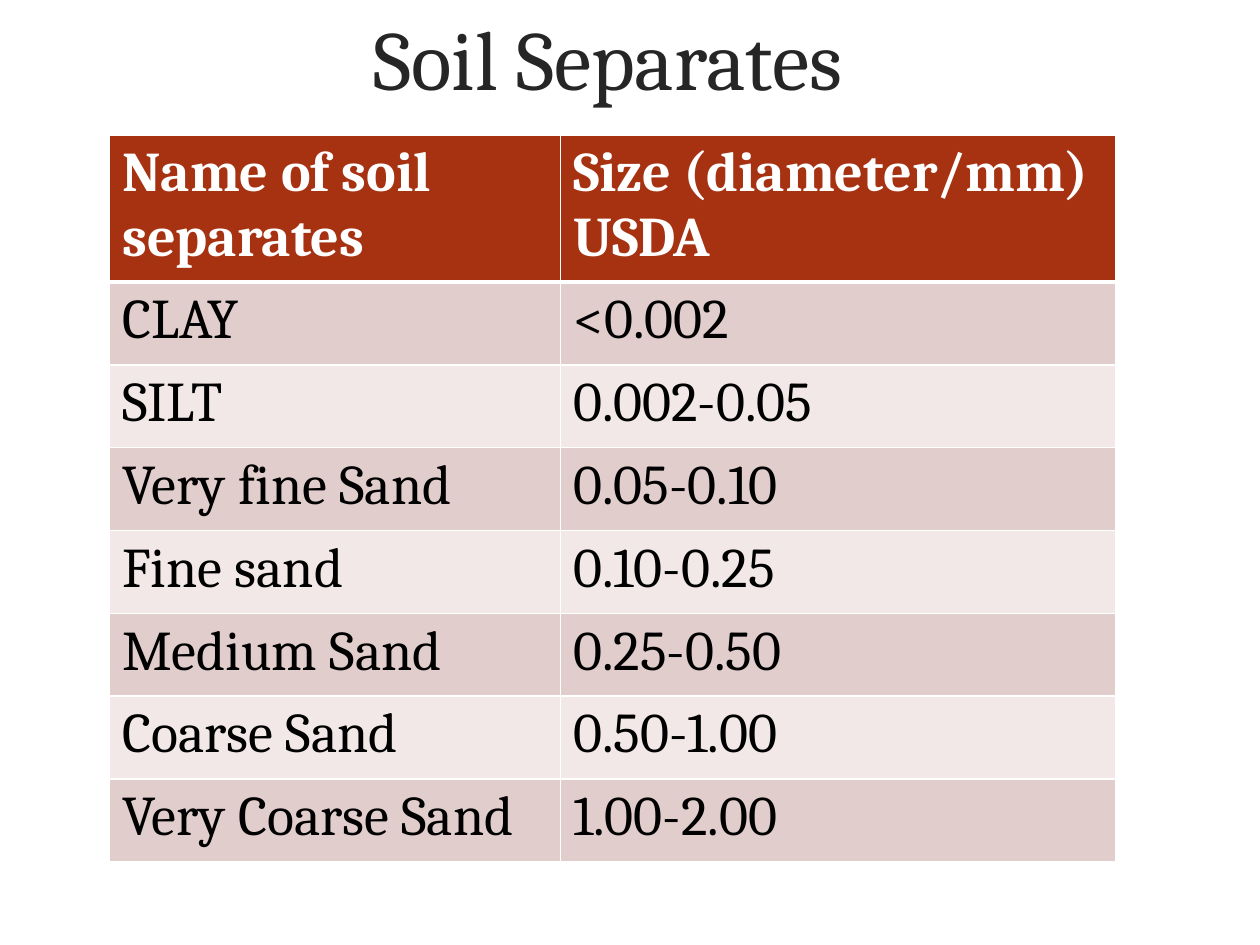
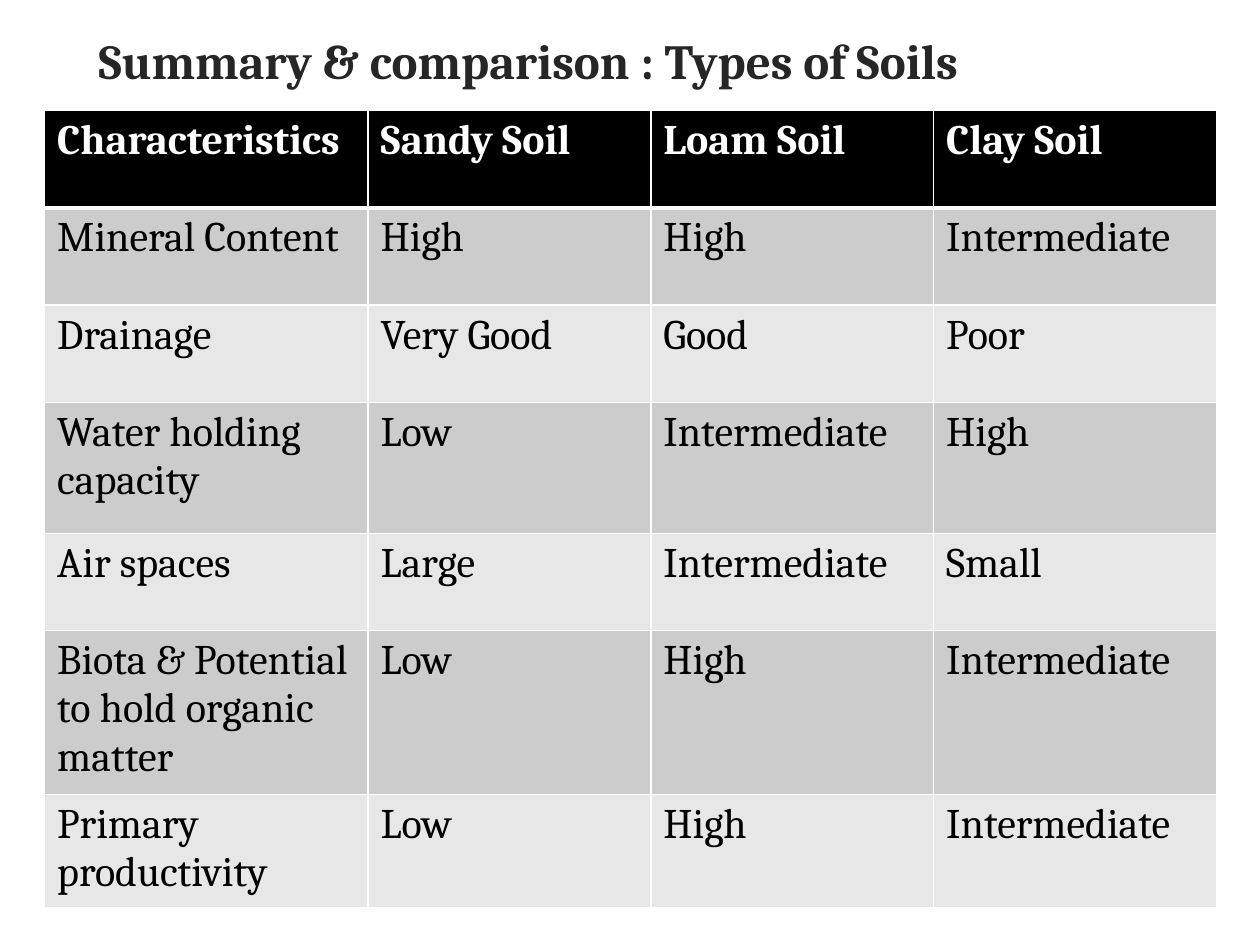
from lxml import etree
from pptx import Presentation
from pptx.dml.color import RGBColor
from pptx.enum.text import MSO_ANCHOR, PP_ALIGN
from pptx.oxml.ns import qn
from pptx.util import Cm, Pt

MIDDLE = MSO_ANCHOR.MIDDLE
LEFT, CENTER = PP_ALIGN.LEFT, PP_ALIGN.CENTER

FACE = "Cambria"
WHITE = RGBColor(0xFF, 0xFF, 0xFF)
BLACK = RGBColor(0, 0, 0)
INK = RGBColor(0x26, 0x26, 0x26)
RUST = RGBColor(0xA6, 0x32, 0x12)
ROSE = RGBColor(0xE1, 0xCE, 0xCC)
BLUSH = RGBColor(0xF1, 0xE8, 0xE7)
GREY = RGBColor(0xCC, 0xCC, 0xCC)
PALE = RGBColor(0xE7, 0xE7, 0xE7)

SIZES = [
    ("Name of soil\nseparates", "Size (diameter/mm)\nUSDA"),
    ("CLAY", "<0.002"),
    ("SILT", "0.002-0.05"),
    ("Very fine Sand", "0.05-0.10"),
    ("Fine sand", "0.10-0.25"),
    ("Medium Sand", "0.25-0.50"),
    ("Coarse Sand", "0.50-1.00"),
    ("Very Coarse Sand", "1.00-2.00"),
]
TYPES = [
    ("Characteristics", "Sandy Soil", "Loam Soil", "Clay Soil"),
    ("Mineral Content", "High", "High", "Intermediate"),
    ("Drainage", "Very Good", "Good", "Poor"),
    ("Water holding capacity", "Low", "Intermediate", "High"),
    ("Air spaces", "Large", "Intermediate", "Small"),
    ("Biota & Potential to hold organic matter", "Low", "High", "Intermediate"),
    ("Primary productivity", "Low", "High", "Intermediate"),
]


def style(frame, size, color, bold, align=LEFT):
    look = {"name": FACE, "size": Pt(size), "bold": bold}
    for para in frame.paragraphs:
        para.alignment = align
        for key, value in look.items():
            setattr(para.font, key, value)
        para.font.color.rgb = color


def add_title(slide, box, text, size, bold=False, align=LEFT, inset=0.25):
    frame = slide.shapes.add_textbox(*map(Cm, box)).text_frame
    frame.word_wrap = True
    frame.vertical_anchor = MIDDLE
    frame.margin_left = Cm(inset)
    frame.text = text
    style(frame, size, INK, bold, align)


def add_edges(cell, row):
    widths = {"L": 1, "R": 1, "T": 3 if row == 1 else 1, "B": 3 if row == 0 else 1}
    props = cell._tc.get_or_add_tcPr()
    for spot, (side, width) in enumerate(widths.items()):
        line = etree.Element(qn(f"a:ln{side}"), w=str(Pt(width)))
        fill = etree.SubElement(line, qn("a:solidFill"))
        etree.SubElement(fill, qn("a:srgbClr"), val=str(WHITE))
        props.insert(spot, line)


def add_grid(slide, spot, data, widths, heights, size, head, bands):
    box = (*spot, sum(widths), sum(heights))
    table = slide.shapes.add_table(len(data), len(widths), *map(Cm, box)).table
    for column, width in zip(table.columns, widths):
        column.width = Cm(width)
    for row, (texts, height) in enumerate(zip(data, heights)):
        table.rows[row].height = Cm(height)
        top = row == 0
        for col, text in enumerate(texts):
            cell = table.cell(row, col)
            cell.text = text
            style(cell.text_frame, size, WHITE if top else BLACK, top)
            cell.fill.solid()
            cell.fill.fore_color.rgb = head if top else bands[(row - 1) % 2]
            add_edges(cell, row)


def add_sizes(slide):
    add_title(slide, (1.09, 0, 22.33, 2.31), "Soil Separates", 48, align=CENTER)
    add_grid(slide, (2.21, 2.72), SIZES, [9.09, 11.2], [2.84] + [1.67] * 7,
             32, RUST, (ROSE, BLUSH))


def add_types(slide):
    add_title(slide, (1.52, -0.08, 22.33, 2.59),
              "Summary & comparison : Types of Soils", 28, bold=True, inset=0.47)
    add_grid(slide, (0.9, 2.23), TYPES, [6.52] + [5.7] * 3,
             [1.96, 1.96, 1.96, 2.64, 1.96, 3.2, 2.18],
             24, BLACK, (GREY, PALE))


def main():
    deck = Presentation()
    deck.slide_width, deck.slide_height = Cm(25.4), Cm(19.05)
    for build in (add_sizes, add_types):
        build(deck.slides.add_slide(deck.slide_layouts[6]))
    deck.save("out.pptx")


if __name__ == "__main__":
    main()
